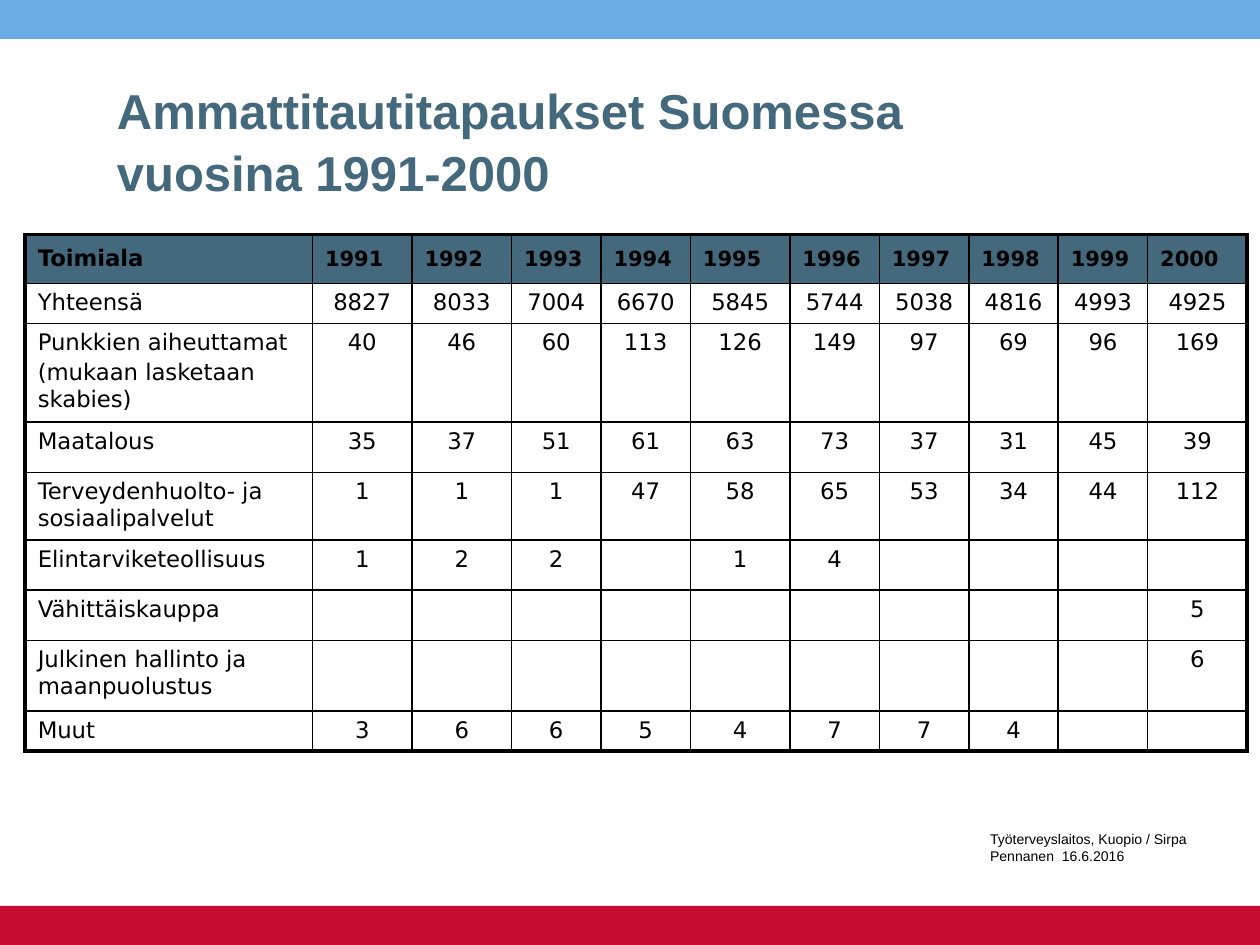
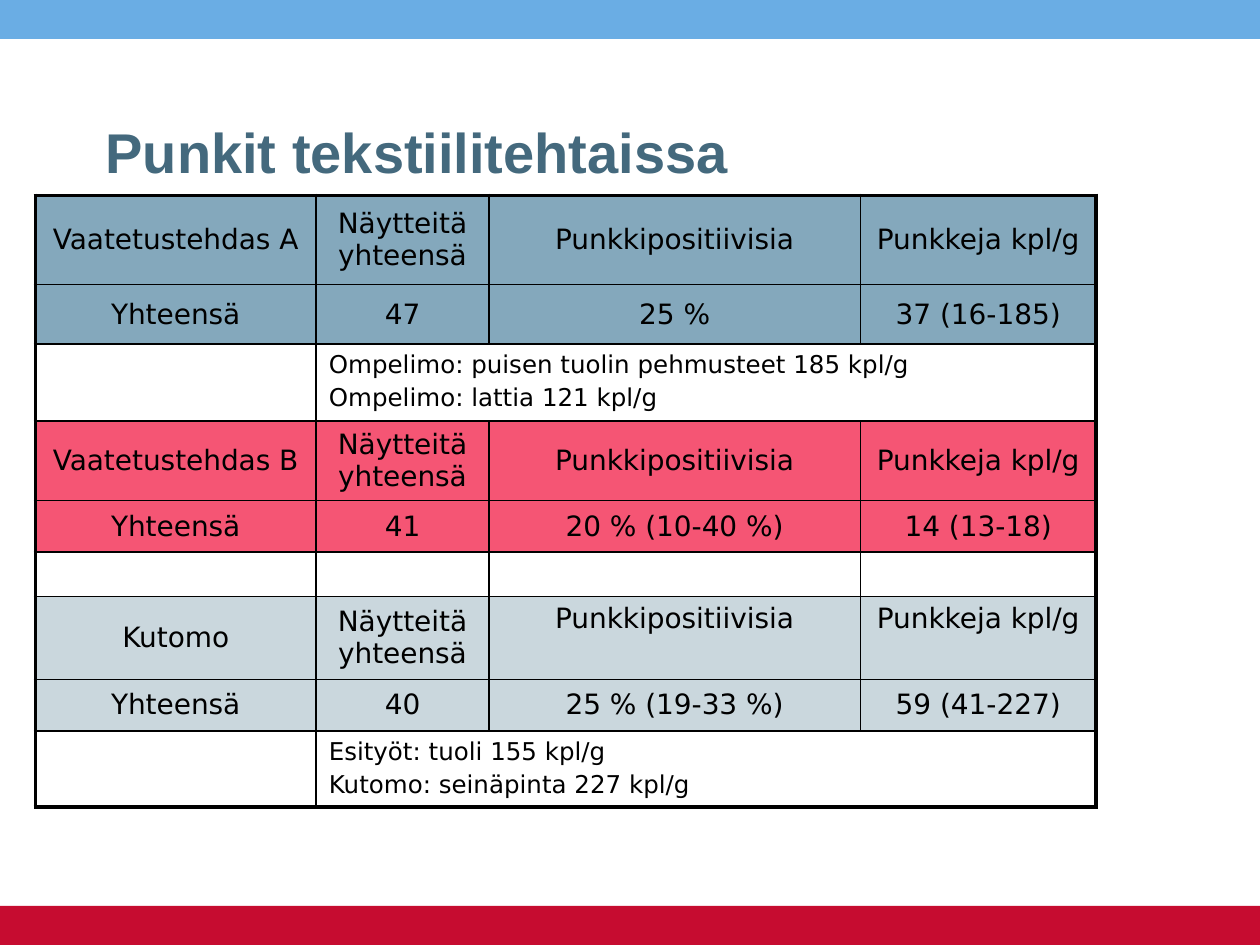
"""Build two slides with tables on mite-related occupational disease in Finland."""
from dataclasses import dataclass
from typing import Optional

from lxml.etree import SubElement
from pptx import Presentation
from pptx.dml.color import RGBColor
from pptx.enum.shapes import MSO_SHAPE
from pptx.enum.text import MSO_ANCHOR as Anchor, PP_ALIGN as Align
from pptx.oxml.ns import qn
from pptx.util import Inches, Pt


@dataclass(frozen=True)
class Theme:
    sky: str = "6AADE4"
    crimson: str = "C60C30"
    slate: str = "44697D"
    steel: str = "84A8BC"
    rose: str = "F55574"
    mist: str = "CAD7DD"
    white: str = "FFFFFF"
    black: str = "000000"
    heading_font: str = "Arial"
    table_font: str = "DejaVu Sans"
    footer_size: int = 8
    empty_size: int = 12
    year_size: int = 12
    case_size: int = 13
    note_size: int = 14
    factory_size: int = 16
    long_title_size: int = 28
    short_title_size: int = 32
    title_spacing: float = 1.05
    paragraph_gap: float = 0.18
    inner_line: float = 1
    outer_line: float = 2.25


THEME = Theme()


@dataclass(frozen=True)
class Band:
    top: float
    color: str
    height: float = 0.31


@dataclass(frozen=True)
class Place:
    left: float
    top: float
    width: float
    height: float

    def lengths(self):
        return [Inches(n) for n in (self.left, self.top, self.width, self.height)]


@dataclass(frozen=True)
class TextStyle:
    size: float
    font: str = THEME.table_font
    color: str = THEME.black
    bold: bool = False


@dataclass(frozen=True)
class CellStyle:
    text: TextStyle
    align: Align = Align.LEFT
    anchor: Anchor = Anchor.TOP
    fill: Optional[str] = None


@dataclass(frozen=True)
class Factory:
    name: str
    color: str
    samples: str
    positive: str
    mites: str
    notes: str = ""
    heading_anchor: Anchor = Anchor.MIDDLE


BANDS = [Band(0, THEME.sky), Band(7.19, THEME.crimson)]

CASE_COLUMNS = [2.28, 0.79, 0.79, 0.71, 0.71, 0.79, 0.71, 0.71, 0.71, 0.71, 0.79]
CASE_HEIGHTS = [0.39, 0.31, 0.76, 0.4, 0.52, 0.4, 0.4, 0.56, 0.31]
CASES = [
    ("Toimiala", *range(1991, 2001)),
    ("Yhteensä", 8827, 8033, 7004, 6670, 5845, 5744, 5038, 4816, 4993, 4925),
    ("Punkkien aiheuttamat\n(mukaan lasketaan skabies)",
     40, 46, 60, 113, 126, 149, 97, 69, 96, 169),
    ("Maatalous", 35, 37, 51, 61, 63, 73, 37, 31, 45, 39),
    ("Terveydenhuolto- ja sosiaalipalvelut", 1, 1, 1, 47, 58, 65, 53, 34, 44, 112),
    ("Elintarviketeollisuus", 1, 2, 2, "", 1, 4, "", "", "", ""),
    ("Vähittäiskauppa", *[""] * 9, 5),
    ("Julkinen hallinto ja maanpuolustus", *[""] * 9, 6),
    ("Muut", 3, 6, 6, 5, 4, 7, 7, 4, "", ""),
]

FACTORY_COLUMNS = [2.23, 1.37, 2.95, 1.87]
FACTORY_HEIGHTS = [0.71, 0.47, 0.61, 0.62, 0.41, 0.35, 0.66, 0.41, 0.59]
FACTORY_HEADINGS = ["Näytteitä yhteensä", "Punkkipositiivisia", "Punkkeja kpl/g"]
FACTORIES = [
    Factory("Vaatetustehdas A", THEME.steel, "47", "25 %", "37 (16-185)",
            "Ompelimo: puisen tuolin pehmusteet 185 kpl/g\nOmpelimo: lattia 121 kpl/g"),
    Factory("Vaatetustehdas B", THEME.rose, "41", "20 % (10-40 %)", "14 (13-18)"),
    Factory("Kutomo", THEME.mist, "40", "25 % (19-33 %)", "59 (41-227)",
            "Esityöt: tuoli 155 kpl/g\nKutomo: seinäpinta 227 kpl/g", Anchor.TOP),
]


def write(frame, text: str, style: TextStyle, align: Align = Align.LEFT,
          spacing: Optional[float] = None) -> None:
    """Fill a text frame, one paragraph for each line of text."""
    for number, line in enumerate(text.split("\n")):
        para = frame.add_paragraph() if number else frame.paragraphs[0]
        para.alignment = align
        if spacing:
            para.line_spacing = spacing
        if number:
            para.space_before = Pt(round(style.size * THEME.paragraph_gap, 1))
        span = para.add_run()
        span.text = line
        span.font.name = style.font
        span.font.size = Pt(style.size)
        span.font.bold = style.bold
        span.font.color.rgb = RGBColor.from_string(style.color)


def add_page(deck):
    """Add a blank page with the shared bands."""
    page = deck.slides.add_slide(deck.slide_layouts[6])
    for band in BANDS:
        place = Place(0, band.top, 10, band.height)
        bar = page.shapes.add_shape(MSO_SHAPE.RECTANGLE, *place.lengths())
        bar.shadow.inherit = False
        bar.fill.solid()
        bar.fill.fore_color.rgb = RGBColor.from_string(band.color)
        bar.line.fill.background()
    return page


def add_text(page, text: str, place: Place, style: TextStyle, wrap: bool = True,
             anchor: Anchor = Anchor.TOP, spacing: Optional[float] = None) -> None:
    """Add a text box."""
    frame = page.shapes.add_textbox(*place.lengths()).text_frame
    frame.word_wrap = wrap
    frame.vertical_anchor = anchor
    write(frame, text, style, spacing=spacing)


def add_title(page, text: str, place: Place, size: float, wrap: bool = True) -> None:
    """Add a title in the shared heading style."""
    style = TextStyle(size, THEME.heading_font, THEME.slate, True)
    add_text(page, text, place, style, wrap, spacing=THEME.title_spacing)


def add_grid(page, left: float, top: float, columns: list, heights: list):
    """Add an unstyled table with a thick frame and thin inner lines."""
    place = Place(left, top, sum(columns), sum(heights))
    table = page.shapes.add_table(len(heights), len(columns), *place.lengths()).table
    table.first_row = table.horz_banding = False
    for column, width in zip(table.columns, columns):
        column.width = Inches(width)
    for row, height in zip(table.rows, heights):
        row.height = Inches(height)
    for r in range(len(heights)):
        for c in range(len(columns)):
            edges = {"lnL": c == 0, "lnR": c == len(columns) - 1,
                     "lnT": r == 0, "lnB": r == len(heights) - 1}
            cell = table.cell(r, c)
            draw_borders(cell, edges)
            cell.fill.background()
            end = SubElement(cell.text_frame.paragraphs[0]._p, qn("a:endParaRPr"))
            end.set("sz", str(THEME.empty_size * 100))
    return table


def draw_borders(cell, edges: dict) -> None:
    """Draw the four borders of a cell, thick where the edge is outer."""
    properties = cell._tc.get_or_add_tcPr()
    for tag, outer in edges.items():
        width = Pt(THEME.outer_line if outer else THEME.inner_line)
        border = SubElement(properties, qn(f"a:{tag}"), w=str(int(width)))
        fill = SubElement(border, qn("a:solidFill"))
        SubElement(fill, qn("a:srgbClr"), val=THEME.black)


def fill_cell(cell, text: str, style: CellStyle) -> None:
    """Set the fill and text of a cell."""
    if style.fill:
        cell.fill.solid()
        cell.fill.fore_color.rgb = RGBColor.from_string(style.fill)
    cell.vertical_anchor = style.anchor
    if text:
        write(cell.text_frame, text, style.text, style.align)


def build_cases(deck) -> None:
    """Build the page on cases by industry and year."""
    page = add_page(deck)
    add_text(page, "Työterveyslaitos, Kuopio / Sirpa Pennanen  16.6.2016",
             Place(7.76, 6.51, 1.97, 0.4),
             TextStyle(THEME.footer_size, THEME.heading_font), anchor=Anchor.BOTTOM)
    table = add_grid(page, 0.2, 1.86, CASE_COLUMNS, CASE_HEIGHTS)
    body = TextStyle(THEME.case_size)
    for r, values in enumerate(CASES):
        for c, value in enumerate(values):
            if r == 0:
                size = THEME.year_size if c else THEME.case_size
                style = CellStyle(TextStyle(size, bold=True), anchor=Anchor.MIDDLE,
                                  fill=THEME.slate)
            else:
                style = CellStyle(body, Align.CENTER if c else Align.LEFT)
            fill_cell(table.cell(r, c), str(value), style)
    add_title(page, "Ammattitautitapaukset Suomessa vuosina 1991-2000",
              Place(0.83, 0.57, 7.09, 1.04), THEME.long_title_size)


def build_factories(deck) -> None:
    """Build the page on mites in textile factories."""
    page = add_page(deck)
    table = add_grid(page, 0.28, 1.55, FACTORY_COLUMNS, FACTORY_HEIGHTS)
    body = TextStyle(THEME.factory_size)
    note = CellStyle(TextStyle(THEME.note_size))
    for number, factory in enumerate(FACTORIES):
        top = 3 * number
        rows = [(factory.name, *FACTORY_HEADINGS),
                ("Yhteensä", factory.samples, factory.positive, factory.mites)]
        for r, texts in enumerate(rows):
            for c, text in enumerate(texts):
                anchor = factory.heading_anchor if r == 0 and c > 1 else Anchor.MIDDLE
                style = CellStyle(body, Align.CENTER, anchor, factory.color)
                fill_cell(table.cell(top + r, c), text, style)
        if factory.notes:
            cell = table.cell(top + 2, 1)
            cell.merge(table.cell(top + 2, 3))
            draw_merged_edge(cell)
            fill_cell(cell, factory.notes, note)
        else:
            for c in range(len(FACTORY_COLUMNS)):
                fill_cell(table.cell(top + 2, c), "", CellStyle(body, fill=THEME.white))
    add_title(page, "Punkit tekstiilitehtaissa", Place(0.74, 0.86, 5.18, 0.64),
              THEME.short_title_size, wrap=False)


def draw_merged_edge(cell) -> None:
    """Thicken the right border of a cell merged to the table's edge."""
    border = cell._tc.tcPr.find(qn("a:lnR"))
    border.set("w", str(int(Pt(THEME.outer_line))))


def main() -> None:
    """Build and save the deck."""
    deck = Presentation()
    deck.slide_width = Inches(10)
    deck.slide_height = Inches(7.5)
    build_cases(deck)
    build_factories(deck)
    deck.save("out.pptx")


if __name__ == "__main__":
    main()
